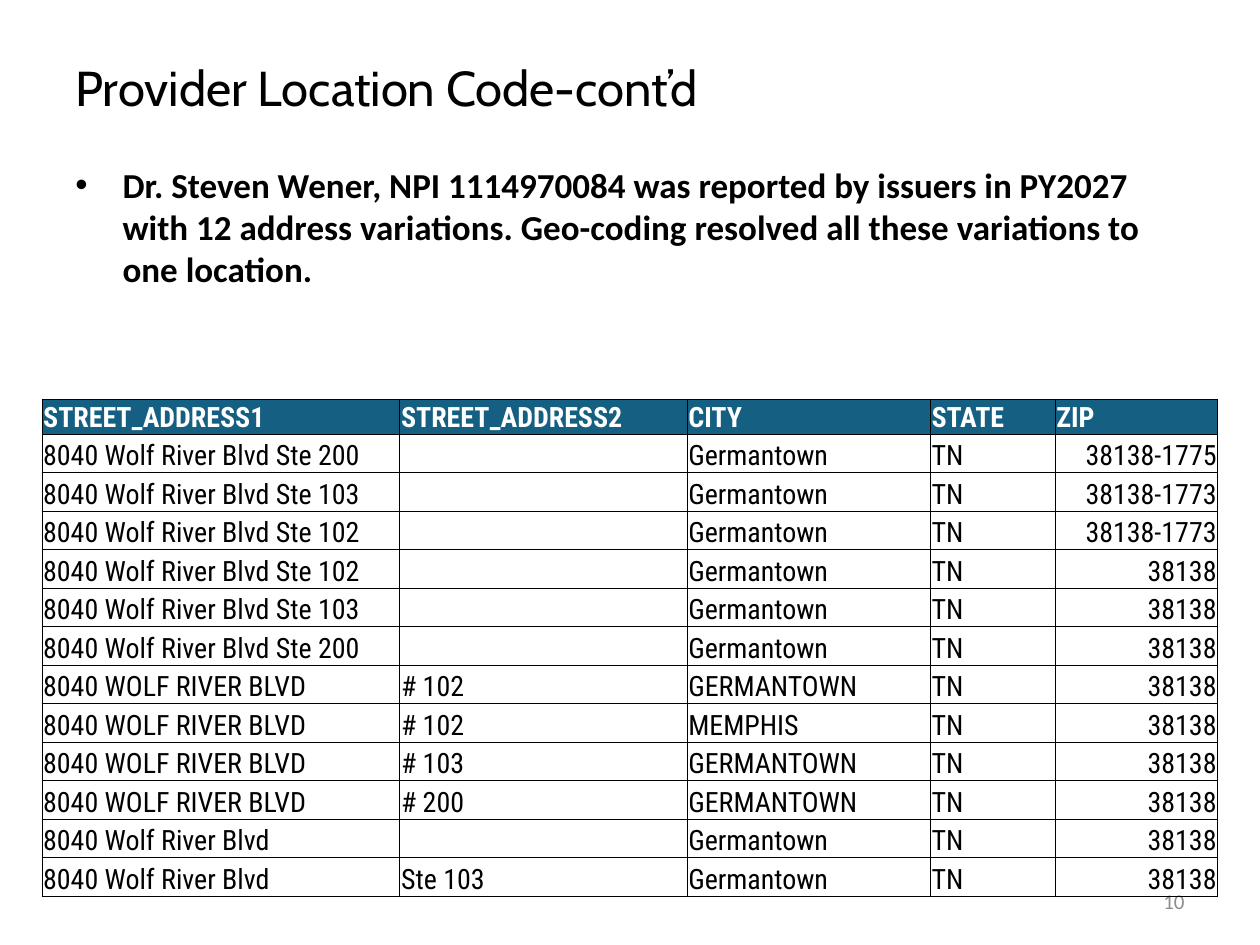
"""Build the Provider Location Code slide with its table of address variations."""
from lxml.etree import SubElement
from pptx import Presentation
from pptx.dml.color import RGBColor
from pptx.enum.text import MSO_ANCHOR, PP_ALIGN
from pptx.oxml.ns import qn
from pptx.util import Pt


def color(value):
    return RGBColor.from_string(value)


def write(frame, text, font, size, fill, bold=False, align=PP_ALIGN.LEFT):
    frame.word_wrap = True
    paragraph = frame.paragraphs[0]
    paragraph.alignment = align
    run = paragraph.add_run()
    run.text = text
    run.font.name = font
    run.font.size = Pt(size)
    run.font.bold = bold
    run.font.color.rgb = color(fill)
    return paragraph


presentation = Presentation()
presentation.slide_width = Pt(720)
presentation.slide_height = Pt(540)
slide = presentation.slides.add_slide(presentation.slide_layouts[6])

title = slide.shapes.add_textbox(Pt(36), Pt(21.6), Pt(540), Pt(56.2)).text_frame
title.vertical_anchor = MSO_ANCHOR.MIDDLE
write(title, "Provider Location Code-cont’d", "Cabin", 28, "000000")

body = slide.shapes.add_textbox(Pt(36), Pt(90), Pt(648), Pt(392.4)).text_frame
message = write(
    body,
    "Dr. Steven Wener, NPI 1114970084 was reported by issuers in PY2027 with 12 address "
    "variations. Geo-coding resolved all these variations to one location.",
    "Calibri", 20, "000000", bold=True,
)
properties = message._p.get_or_add_pPr()
properties.set("marL", str(Pt(27)))
properties.set("indent", str(Pt(-27)))
SubElement(properties, qn("a:buFont"), typeface="Arial")
SubElement(properties, qn("a:buChar"), char="•")

number = slide.shapes.add_textbox(Pt(516), Pt(500.4), Pt(168), Pt(28.8)).text_frame
number.vertical_anchor = MSO_ANCHOR.MIDDLE
write(number, "10", "Calibri", 12, "8C8C8C", align=PP_ALIGN.RIGHT)

mixed, upper = "8040 Wolf River Blvd", "8040 WOLF RIVER BLVD"
rows = [
    ("STREET_ADDRESS1", "STREET_ADDRESS2", "CITY", "STATE", "ZIP"),
    (f"{mixed} Ste 200", "", "Germantown", "TN", "38138-1775"),
    (f"{mixed} Ste 103", "", "Germantown", "TN", "38138-1773"),
    (f"{mixed} Ste 102", "", "Germantown", "TN", "38138-1773"),
    (f"{mixed} Ste 102", "", "Germantown", "TN", "38138"),
    (f"{mixed} Ste 103", "", "Germantown", "TN", "38138"),
    (f"{mixed} Ste 200", "", "Germantown", "TN", "38138"),
    (upper, "# 102", "GERMANTOWN", "TN", "38138"),
    (upper, "# 102", "MEMPHIS", "TN", "38138"),
    (upper, "# 103", "GERMANTOWN", "TN", "38138"),
    (upper, "# 200", "GERMANTOWN", "TN", "38138"),
    (mixed, "", "Germantown", "TN", "38138"),
    (mixed, "Ste 103", "Germantown", "TN", "38138"),
]
widths = [204.5, 164.2, 139, 71.3, 92.9]
header_height, row_height = 18.9, 22
table_height = header_height + row_height * (len(rows) - 1)
table = slide.shapes.add_table(
    len(rows), len(widths), Pt(24), Pt(228.2), Pt(sum(widths)), Pt(table_height)
).table
for column, width in zip(table.columns, widths):
    column.width = Pt(width)

for row_index, values in enumerate(rows):
    header = row_index == 0
    table.rows[row_index].height = Pt(header_height if header else row_height)
    for column_index, value in enumerate(values):
        cell = table.cell(row_index, column_index)
        cell.vertical_anchor = MSO_ANCHOR.BOTTOM
        cell.margin_left = cell.margin_right = cell.margin_top = Pt(0.7)
        cell.margin_bottom = Pt(0)
        cell_properties = cell._tc.get_or_add_tcPr()
        for side in ("a:lnL", "a:lnR", "a:lnT", "a:lnB"):
            border = SubElement(cell_properties, qn(side), w=str(Pt(0.5)))
            SubElement(SubElement(border, qn("a:solidFill")), qn("a:srgbClr"), val="000000")
        if header:
            cell.fill.solid()
            cell.fill.fore_color.rgb = color("156082")
        else:
            cell.fill.background()
        if value:
            right = column_index == len(widths) - 1 and not header
            write(
                cell.text_frame, value, "Roboto Condensed", 16,
                "FFFFFF" if header else "000000", bold=header,
                align=PP_ALIGN.RIGHT if right else PP_ALIGN.LEFT,
            )
        else:
            SubElement(cell.text_frame.paragraphs[0]._p, qn("a:endParaRPr"), sz="1600")

presentation.save("out.pptx")
